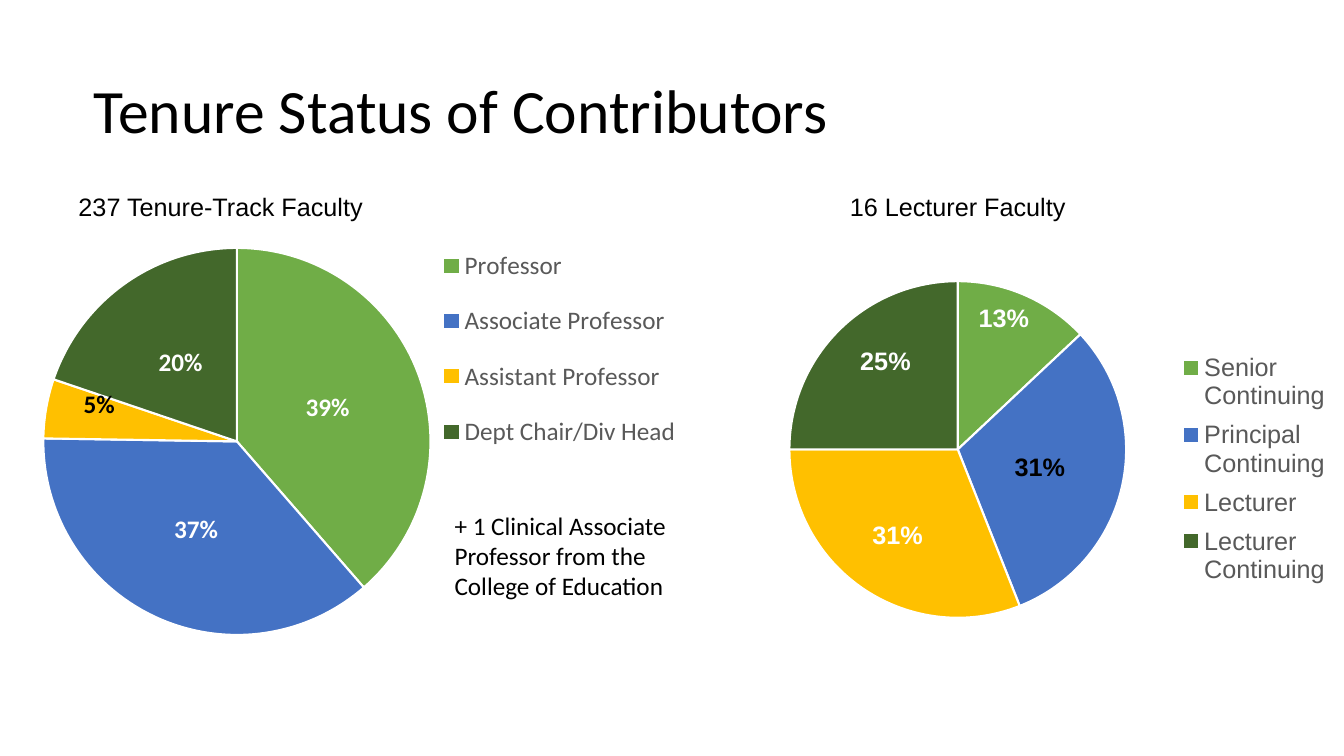
from lxml import etree
from pptx import Presentation
from pptx.chart.data import CategoryChartData
from pptx.dml.color import RGBColor
from pptx.enum import chart as ch, text as tx
from pptx.oxml.ns import qn
from pptx.util import Inches, Pt

TITLE = "Tenure Status of Contributors"
SLICE_COLORS = ["70AD47", "4472C4", "FFC000", "43682B"]
# Boxes are left, top, width, height in inches on the slide.
# "labels" maps a slice to its label colour and its shift as a share of the chart.
PIES = [
    dict(
        font="Calibri", box=(-0.06, 1.85, 7.01, 5.07),
        pie=(0.43, 2.46, 3.84, 3.84), legend=(4.3, 2.24, 2.5, 2.44),
        slices={"Professor": 39, "Associate Professor": 37,
                "Assistant Professor": 5, "Dept Chair/Div Head": 20},
        labels={2: ("000000", -0.06, -0.04)},
    ),
    dict(
        font="Arial", box=(7.01, 2.38, 6.32, 4.09),
        pie=(7.83, 2.79, 3.34, 3.34), legend=(11.58, 3.4, 1.72, 2.5),
        slices={"Senior Continuing": 13, "Principal Continuing": 31,
                "Lecturer": 31, "Lecturer Continuing": 25},
        labels={0: ("FFFFFF", 0.02, -0.13), 1: ("000000", 0, 0),
                2: ("FFFFFF", -0.02, 0.04), 3: ("FFFFFF", -0.02, -0.07)},
    ),
]
NOTES = [
    ("237 Tenure-Track Faculty", "Arial", (0.68, 1.85, 3.72, 0.4)),
    ("16 Lecturer Faculty", "Arial", (8.33, 1.85, 3.38, 0.4)),
    ("+ 1 Clinical Associate Professor from the College of Education",
     "Calibri", (4.41, 5.01, 2.35, 1.01)),
]


def color(value):
    return RGBColor.from_string(value)


def format_font(font, name, size=18, fill="000000", bold=False):
    font.name, font.size, font.bold = name, Pt(size), bold
    font.color.rgb = color(fill)


def write_text(shape, words, font, size=18, anchor=tx.MSO_ANCHOR.TOP, spacing=None):
    frame = shape.text_frame
    frame.word_wrap = True
    frame.vertical_anchor = anchor
    paragraph = frame.paragraphs[0]
    paragraph.alignment = tx.PP_ALIGN.LEFT
    paragraph.line_spacing = spacing
    run = paragraph.add_run()
    run.text = words
    format_font(run.font, font, size)


def set_layout(parent, position, **values):
    """Give a chart part a manual layout as its child at the given position."""
    for old in parent.findall(qn("c:layout")):
        parent.remove(old)
    layout = etree.Element(qn("c:layout"))
    manual = etree.SubElement(layout, qn("c:manualLayout"))
    for tag, value in values.items():
        etree.SubElement(manual, qn("c:" + tag), val=str(value))
    parent.insert(position, layout)


def fractions(part, box):
    """Express a slide box as shares of the chart's box."""
    return dict(
        xMode="edge", yMode="edge",
        x=round((part[0] - box[0]) / box[2], 4),
        y=round((part[1] - box[1]) / box[3], 4),
        w=round(part[2] / box[2], 4), h=round(part[3] / box[3], 4),
    )


def add_pie(slide, font, box, pie, legend, slices, labels):
    data = CategoryChartData()
    data.categories = list(slices)
    data.add_series("Series 1", list(slices.values()))
    frame = slide.shapes.add_chart(ch.XL_CHART_TYPE.PIE, *map(Inches, box), data)
    chart = frame.chart
    chart.has_title = False
    format_font(chart.font, "Calibri", 10)
    chart.has_legend = True
    chart.legend.position = ch.XL_LEGEND_POSITION.RIGHT
    chart.legend.include_in_layout = False
    format_font(chart.legend.font, font, fill="595959")

    plot = chart.plots[0]
    plot.vary_by_categories = True
    series = plot.series[0]
    for index, fill in enumerate(SLICE_COLORS):
        slice_format = series.points[index].format
        slice_format.fill.solid()
        slice_format.fill.fore_color.rgb = color(fill)
        slice_format.line.color.rgb = color("FFFFFF")
        slice_format.line.width = Pt(1.5)

    data_labels = series.data_labels
    data_labels.show_percentage = True
    data_labels.show_value = False
    data_labels.number_format = "0%"
    data_labels.number_format_is_linked = False
    data_labels.position = ch.XL_LABEL_POSITION.CENTER
    format_font(data_labels.font, font, fill="FFFFFF", bold=True)
    for index, (fill, _, _) in labels.items():
        label = series.points[index].data_label
        format_font(label.font, font, fill=fill, bold=True)
        label.position = ch.XL_LABEL_POSITION.CENTER

    space = chart.element
    for label in space.iter(qn("c:dLbl")):
        _, x, y = labels[int(label.find(qn("c:idx")).get("val"))]
        label.find(qn("c:showVal")).set("val", "0")
        label.find(qn("c:showPercent")).set("val", "1")
        set_layout(label, 1, x=x, y=y)
    plot_area = next(space.iter(qn("c:plotArea")))
    set_layout(plot_area, 0, layoutTarget="inner", **fractions(pie, box))
    set_layout(next(space.iter(qn("c:legend"))), 1, **fractions(legend, box))


def main():
    presentation = Presentation()
    presentation.slide_width = Inches(13.33)
    presentation.slide_height = Inches(7.5)
    slide = presentation.slides.add_slide(presentation.slide_layouts[5])

    title = slide.shapes.title
    title.left, title.top, title.width, title.height = map(
        Inches, (0.83, 0.4, 11.5, 1.45))
    write_text(title, TITLE, "Calibri", 44, tx.MSO_ANCHOR.MIDDLE, 0.9)
    for pie in PIES:
        add_pie(slide, **pie)
    for words, font, box in NOTES:
        write_text(slide.shapes.add_textbox(*map(Inches, box)), words, font)
    presentation.save("out.pptx")


if __name__ == "__main__":
    main()
